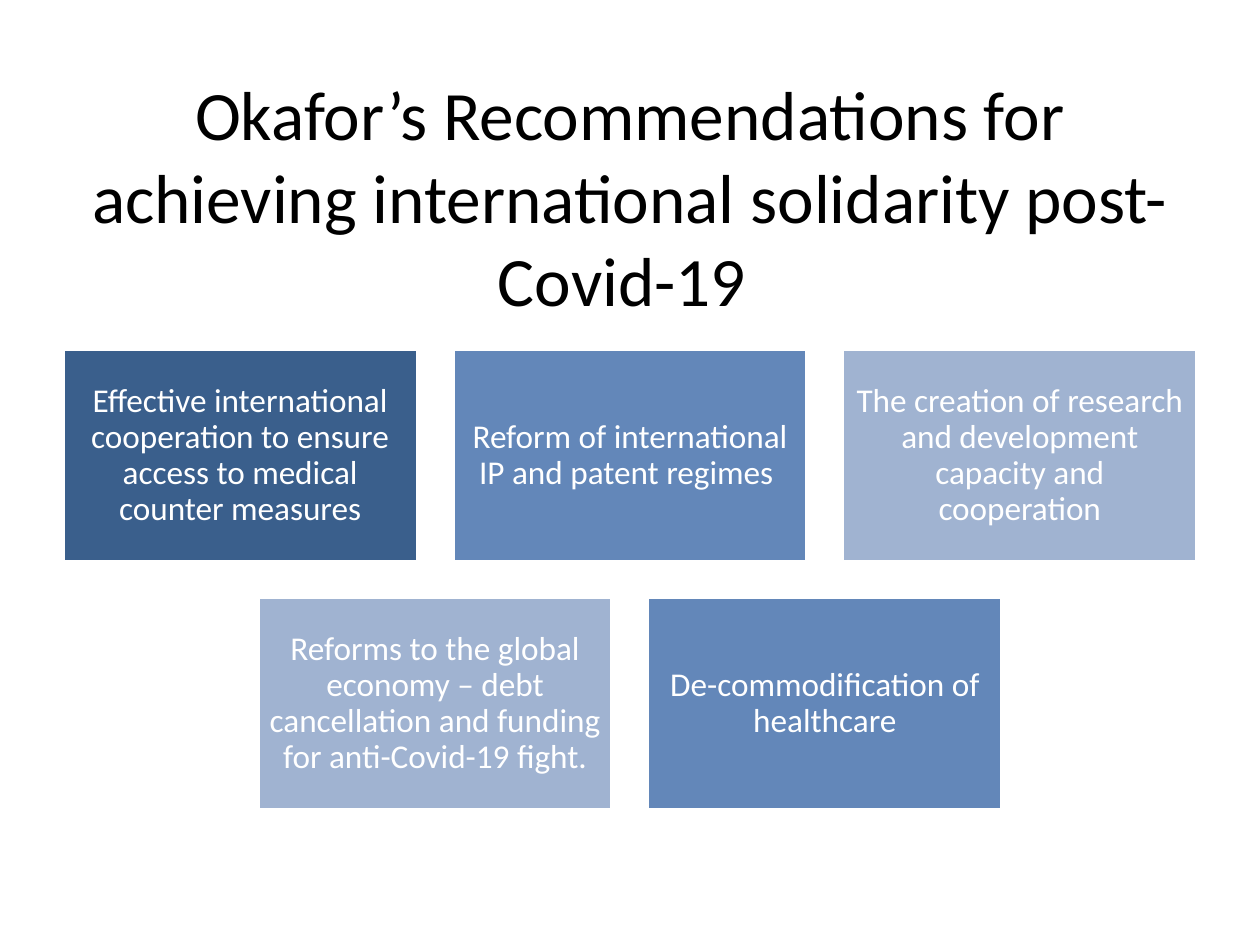
import pptx
import pptx.util
import pptx.dml.color
import pptx.enum.shapes
import pptx.enum.text

Pt = pptx.util.Pt
HUES = {"dark": "3A5F8C", "mid": "6387B9", "pale": "A0B3D1",
        "white": "FFFFFF", "black": "000000"}
ROWS = [
    [("Effective international cooperation to ensure access to medical "
      "counter measures", "dark"),
     ("Reform of international IP and patent regimes ", "mid"),
     ("The creation of research and development capacity and cooperation",
      "pale")],
    [("Reforms to the global economy – debt cancellation and funding for "
      "anti-Covid-19 fight.", "pale"),
     ("De-commodification of healthcare", "mid")],
]


def shade(name):
    return pptx.dml.color.RGBColor.from_string(HUES[name])


def write(shape, text, size, hue, inset=None, lead=None):
    frame = shape.text_frame
    frame.word_wrap = True
    frame.auto_size = pptx.enum.text.MSO_AUTO_SIZE.NONE
    frame.vertical_anchor = pptx.enum.text.MSO_ANCHOR.MIDDLE
    if inset is not None:
        frame.margin_left = frame.margin_right = Pt(inset)
        frame.margin_top = frame.margin_bottom = Pt(inset)
    para = frame.paragraphs[0]
    para.alignment = pptx.enum.text.PP_ALIGN.CENTER
    if lead:
        para.line_spacing = lead
    run = para.add_run()
    run.text = text
    run.font.name = "Calibri"
    run.font.size = Pt(size)
    run.font.color.rgb = shade(hue)


def head(slide, left, top, width, height):
    title = slide.shapes.title
    title.left, title.top = Pt(left), Pt(top)
    title.width, title.height = Pt(width), Pt(height)
    write(title, "Okafor’s Recommendations for achieving international "
          "solidarity post-Covid-19 ", size=39.6, hue="black")


def tile(slide, left, top, width, height, text, hue):
    rect = slide.shapes.add_shape(
        pptx.enum.shapes.MSO_SHAPE.RECTANGLE,
        Pt(left), Pt(top), Pt(width), Pt(height))
    rect.shadow.inherit = False
    rect.fill.solid()
    rect.fill.fore_color.rgb = shade(hue)
    rect.line.color.rgb = shade("white")
    rect.line.width = Pt(2)
    write(rect, text, size=19, hue="white", inset=5.76, lead=0.9)


def grid(slide, left, top, width):
    """Fill the width with the longest row and centre the shorter ones."""
    most = max(len(row) for row in ROWS)
    wide = width / (most + 0.1 * (most - 1))
    tall, gap = 0.6 * wide, 0.1 * wide
    for i, row in enumerate(ROWS):
        start = left + (most - len(row)) * (wide + gap) / 2
        for j, (text, hue) in enumerate(row):
            tile(slide, start + j * (wide + gap), top + i * (tall + gap),
                 wide, tall, text, hue)


def main():
    deck = pptx.Presentation()
    deck.slide_width, deck.slide_height = Pt(720), Pt(540)
    slide = deck.slides.add_slide(deck.slide_layouts[5])
    head(slide, 36, 42, 648, 139.5)
    grid(slide, 36, 199.5, 648)
    deck.save("out.pptx")


if __name__ == "__main__":
    main()
